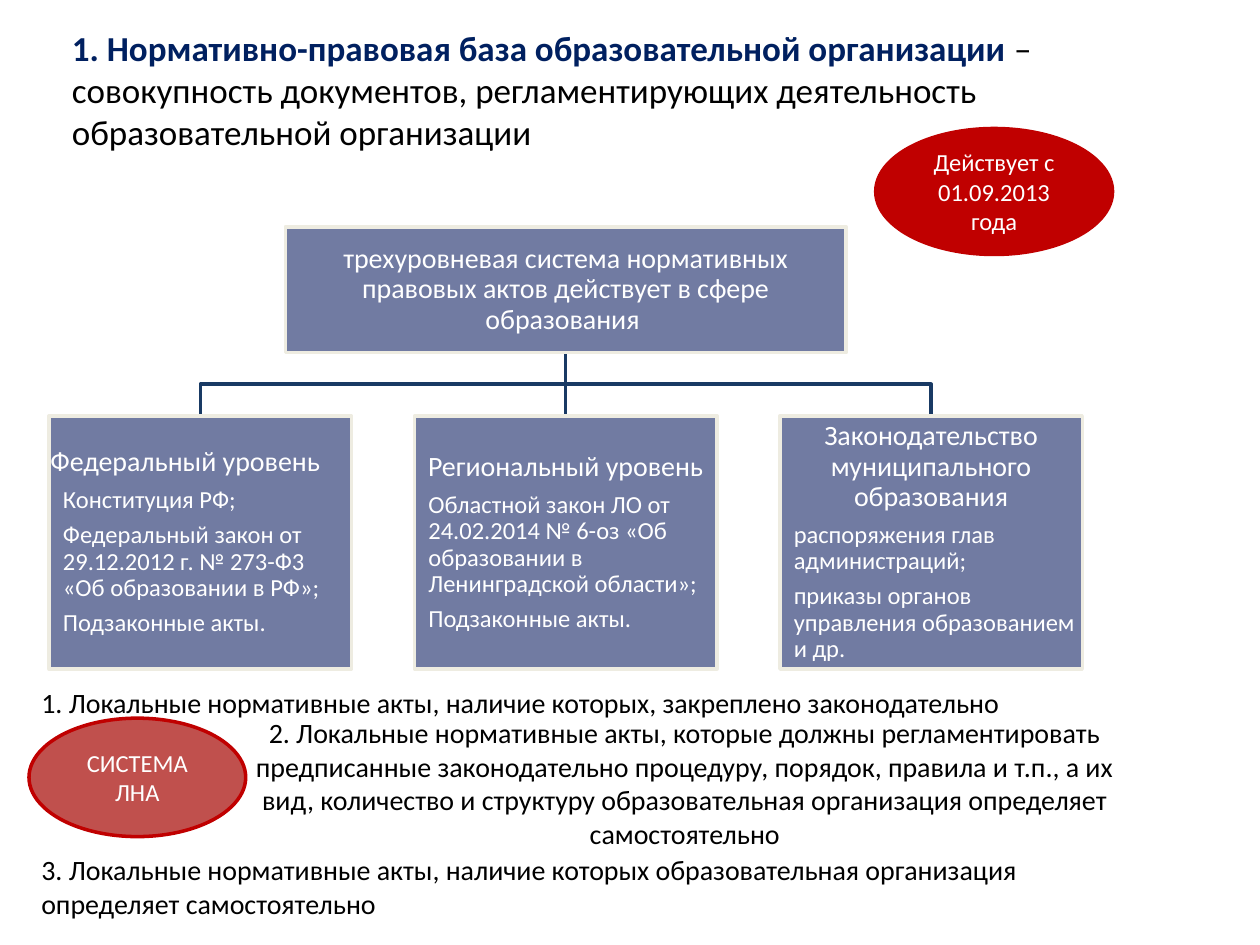
from dataclasses import dataclass

from lxml import etree
from pptx import Presentation
from pptx.dml.color import RGBColor
from pptx.enum.shapes import MSO_CONNECTOR, MSO_SHAPE
from pptx.enum.text import MSO_ANCHOR, MSO_AUTO_SIZE, PP_ALIGN
from pptx.oxml.ns import qn
from pptx.util import Inches, Pt

LEFT, CENTER = PP_ALIGN.LEFT, PP_ALIGN.CENTER
TOP, MIDDLE = MSO_ANCHOR.TOP, MSO_ANCHOR.MIDDLE
RECTANGLE, OVAL = MSO_SHAPE.RECTANGLE, MSO_SHAPE.OVAL
STRAIGHT = MSO_CONNECTOR.STRAIGHT
NO_AUTOFIT = MSO_AUTO_SIZE.NONE
TITLE_ONLY = 5

FONT = "Calibri"
NAVY, BLACK, WHITE = "002060", "000000", "FFFFFF"
BOX_FILL, BOX_LINE, BRANCH = "717BA2", "EEECE1", "193A64"
RED, SOFT_RED = "C00000", "C0504D"

# Three equal columns hang below one root box.
GRID_LEFT, COLUMN_WIDTH, COLUMN_GAP = 0.39, 2.4, 0.5
ROOT_TOP, ROOT_WIDTH, ROOT_HEIGHT = 1.8, 4.45, 1
LEVEL_TOP, LEVEL_HEIGHT = 3.3, 2.01


@dataclass
class Area:
    left: float
    top: float
    width: float
    height: float

    def lengths(self) -> list:
        return [Inches(v) for v in (self.left, self.top, self.width, self.height)]


@dataclass
class Line:
    text: str
    size: int = 16
    color: str = BLACK
    align: PP_ALIGN = LEFT
    indent: float = 0
    tight: bool = False


@dataclass
class Level:
    heading: str
    acts: list
    align: PP_ALIGN = CENTER


@dataclass
class Badge:
    text: str
    area: Area
    fill: str


@dataclass
class Note:
    text: str
    area: Area
    align: PP_ALIGN = LEFT


LEVELS = [
    Level("Федеральный уровень",
          ["Конституция РФ;",
           "Федеральный закон от 29.12.2012 г. № 273-Ф3 «Об образовании в РФ»;",
           "Подзаконные акты."], LEFT),
    Level("Региональный уровень",
          ["Областной закон ЛО от 24.02.2014 № 6-оз «Об образовании в Ленинградской области»;",
           "Подзаконные акты."]),
    Level("Законодательство муниципального образования",
          ["распоряжения глав администраций;",
           "приказы органов управления образованием и др."]),
]
NOTES = [
    Note("1. Локальные нормативные акты, наличие которых, закреплено законодательно",
         Area(0.23, 5.39, 8.83, 0.37)),
    Note("2. Локальные нормативные акты, которые должны регламентировать предписанные "
         "законодательно процедуру, порядок, правила и т.п., а их вид, количество и "
         "структуру образовательная организация определяет самостоятельно",
         Area(1.8, 5.63, 7.27, 1.18), CENTER),
    Note("3. Локальные нормативные акты, наличие которых образовательная организация "
         "определяет самостоятельно", Area(0.23, 6.72, 8.67, 0.64)),
]
BADGES = [
    Badge("Действует с 01.09.2013 года", Area(6.95, 1.02, 1.88, 1), RED),
    Badge("СИСТЕМА ЛНА", Area(0.23, 5.7, 1.72, 0.94), SOFT_RED),
]


def rgb(color: str) -> RGBColor:
    return RGBColor.from_string(color)


def column_area(index: int) -> Area:
    left = GRID_LEFT + index * (COLUMN_WIDTH + COLUMN_GAP)
    return Area(left, LEVEL_TOP, COLUMN_WIDTH, LEVEL_HEIGHT)


def column_center(index: int) -> float:
    return column_area(index).left + COLUMN_WIDTH / 2


def add_span(para, text: str, size: int, color: str, bold: bool = False) -> None:
    span = para.add_run()
    span.text = text
    for name, value in {"name": FONT, "size": Pt(size), "bold": bold}.items():
        setattr(span.font, name, value)
    span.font.color.rgb = rgb(color)


def write_lines(frame, lines: list[Line], anchor: MSO_ANCHOR, **margins) -> None:
    frame_format = {"word_wrap": True, "vertical_anchor": anchor, **margins}
    for name, value in frame_format.items():
        setattr(frame, name, value)
    for number, line in enumerate(lines):
        para = frame.add_paragraph() if number else frame.paragraphs[0]
        para.alignment = line.align
        if line.tight:
            para.line_spacing = 0.9
            para.space_after = Pt(0.35 * line.size)
        if line.indent:
            properties = para._p.get_or_add_pPr()
            properties.set("marL", str(Inches(line.indent)))
            properties.set("indent", "0")
        add_span(para, line.text, line.size, line.color)


def style_line(shape, color: str) -> None:
    shape.line.color.rgb = rgb(color)
    shape.line.width = Pt(2)


def add_filled(page, kind: MSO_SHAPE, area: Area, fill: str, line: str):
    shape = page.shapes.add_shape(kind, *area.lengths())
    shape.shadow.inherit = False
    shape.fill.solid()
    shape.fill.fore_color.rgb = rgb(fill)
    style_line(shape, line)
    return shape


def add_box(page, area: Area, lines: list[Line]) -> None:
    box = add_filled(page, RECTANGLE, area, BOX_FILL, BOX_LINE)
    sides = ("left", "top", "right", "bottom")
    margins = {f"margin_{side}": Inches(0.01) for side in sides}
    write_lines(box.text_frame, lines, MIDDLE, **margins)


def add_branch(page, target: float) -> None:
    """Join the root box to the column centred at target."""
    start, top = Inches(column_center(1)), Inches(ROOT_TOP + ROOT_HEIGHT)
    end, bottom = Inches(target), Inches(LEVEL_TOP)
    if start == end:
        branch = page.shapes.add_connector(STRAIGHT, start, top, end, bottom)
        etree.SubElement(branch._element.spPr, qn("a:effectLst"))
    else:
        middle = (top + bottom) // 2
        builder = page.shapes.build_freeform(start, top)
        builder.add_line_segments([(start, middle), (end, middle), (end, bottom)], close=False)
        branch = builder.convert_to_shape()
        branch.shadow.inherit = False
        branch.fill.background()
    style_line(branch, BRANCH)


def add_title(page) -> None:
    title = page.shapes.title
    places = Area(0.47, 0.16, 7.97, 1.11).lengths()
    for name, value in zip(("left", "top", "width", "height"), places):
        setattr(title, name, value)
    frame = title.text_frame
    frame.auto_size = NO_AUTOFIT
    write_lines(frame, [], TOP)
    para = frame.paragraphs[0]
    para.alignment = LEFT
    add_span(para, "1. Нормативно-правовая база образовательной организации ", 20, NAVY, True)
    add_span(para, "– совокупность документов, регламентирующих деятельность "
                   "образовательной организации", 20, BLACK)


def add_tree(page) -> None:
    for index in range(len(LEVELS)):
        add_branch(page, column_center(index))
    root = Area(column_center(1) - ROOT_WIDTH / 2, ROOT_TOP, ROOT_WIDTH, ROOT_HEIGHT)
    root_text = "трехуровневая система нормативных правовых актов действует в сфере образования "
    add_box(page, root, [Line(root_text, 16, WHITE, CENTER, tight=True)])
    for index, level in enumerate(LEVELS):
        heading = Line(level.heading, 16, WHITE, level.align, tight=True)
        acts = [Line(act, 14, WHITE, indent=0.1, tight=True) for act in level.acts]
        add_box(page, column_area(index), [heading, *acts])


def main() -> None:
    deck = Presentation()
    deck.slide_width, deck.slide_height = Inches(10), Inches(7.5)
    page = deck.slides.add_slide(deck.slide_layouts[TITLE_ONLY])
    add_title(page)
    add_tree(page)
    for note in NOTES:
        box = page.shapes.add_textbox(*note.area.lengths())
        write_lines(box.text_frame, [Line(note.text, align=note.align)], TOP)
    for badge in BADGES:
        oval = add_filled(page, OVAL, badge.area, badge.fill, RED)
        write_lines(oval.text_frame, [Line(badge.text, 14, WHITE, CENTER)], MIDDLE)
    deck.save("out.pptx")


if __name__ == "__main__":
    main()
